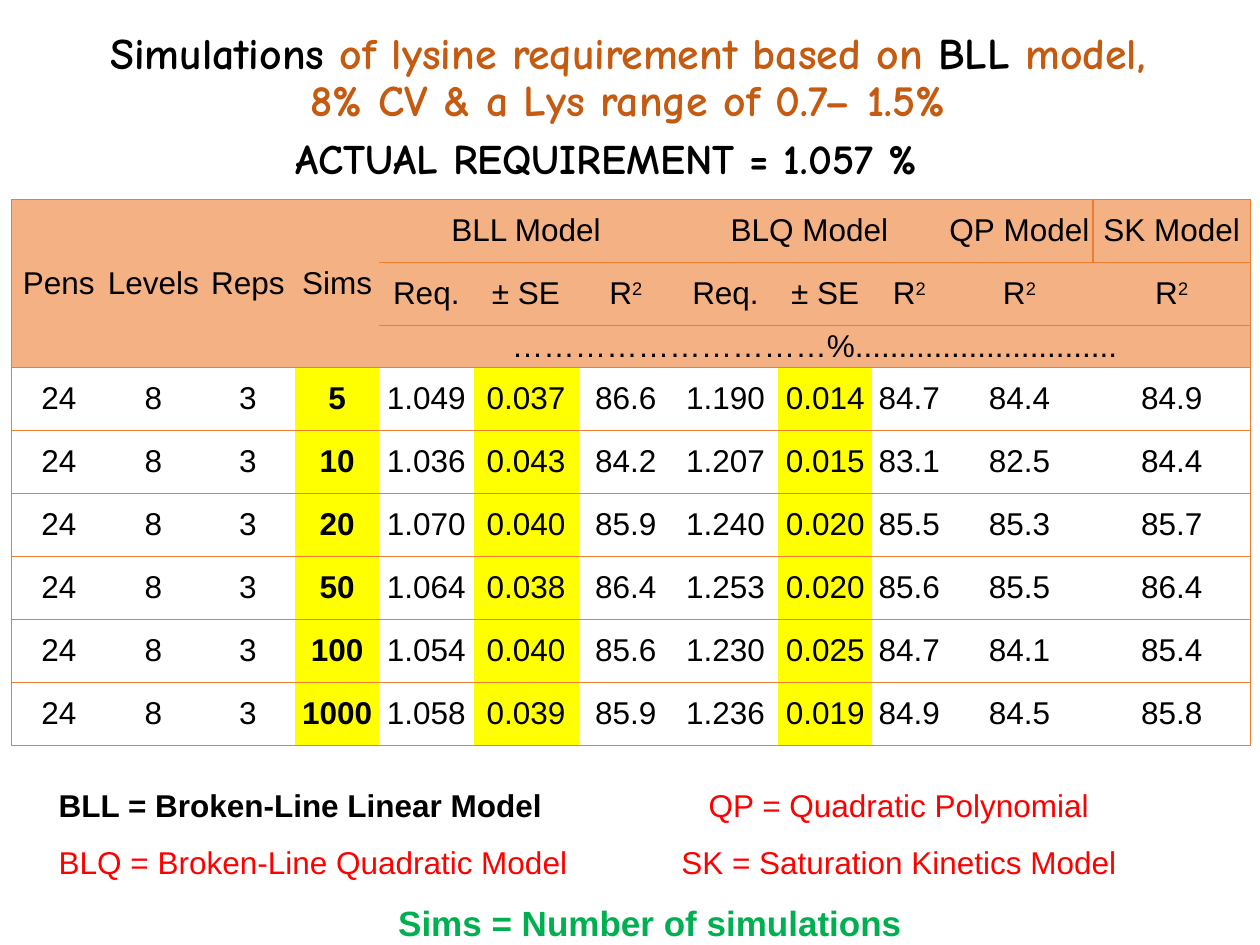
import dataclasses
import typing

import pptx
import pptx.dml.color
import pptx.enum.text
import pptx.oxml
import pptx.oxml.ns
import pptx.util

SCALE = 7620
BLACK, RUST, RED, GREEN = "000000", "C55A11", "FF0000", "00B050"
PEACH, WHITE, YELLOW, LINE = "F4B183", "FFFFFF", "FFFF00", "ED7D31"
ALIGN = pptx.enum.text.PP_ALIGN
MIDDLE = pptx.enum.text.MSO_ANCHOR.MIDDLE

COLS = (90, 90, 90, 80, 90, 100, 90, 100, 90, 70, 140, 150)
ROWS = (60, 60, 40) + (60,) * 6
LAST = len(COLS) - 1
SIMS = 3
MARKED = (3, 5, 8)
DOTS = "…………………………%.............................."
HEADS = (
    ("Pens", "Levels", "Reps", "Sims", "BLL Model", "", "",
     "BLQ Model", "", "", "QP\u00a0Model", "SK\u00a0Model"),
    ("",) * 4 + ("Req.", "± SE", "R2") * 2 + ("R2", "R2"),
    ("",) * 4 + (DOTS,) + ("",) * 7,
)
DATA = (
    "5 1.049 0.037 86.6 1.190 0.014 84.7 84.4 84.9",
    "10 1.036 0.043 84.2 1.207 0.015 83.1 82.5 84.4",
    "20 1.070 0.040 85.9 1.240 0.020 85.5 85.3 85.7",
    "50 1.064 0.038 86.4 1.253 0.020 85.6 85.5 86.4",
    "100 1.054 0.040 85.6 1.230 0.025 84.7 84.1 85.4",
    "1000 1.058 0.039 85.9 1.236 0.019 84.9 84.5 85.8",
)
SPANS = [(0, c, 2, c) for c in range(4)] + [(0, 4, 0, 6), (0, 7, 0, 9), (2, 4, 2, LAST)]


@dataclasses.dataclass
class Run:
    text: str
    color: str = BLACK
    bold: bool = False
    size: int = 18
    font: str = "Arial"
    raised: bool = False


@dataclasses.dataclass
class Line:
    runs: typing.List[Run]
    align: typing.Any = ALIGN.LEFT
    space: float = 1.0
    tab: int = 0


@dataclasses.dataclass
class Box:
    left: int
    top: int
    width: int
    height: int
    lines: typing.List[Line]
    format: dict = dataclasses.field(default_factory=dict)


def px(n: int) -> int:
    return pptx.util.Emu(n * SCALE)


def rgb(code: str) -> pptx.dml.color.RGBColor:
    return pptx.dml.color.RGBColor.from_string(code)


def apply(item: typing.Any, values: dict) -> None:
    for name, value in values.items():
        setattr(item, name, value)


def add_line(para: typing.Any, line: Line) -> None:
    apply(para, {"alignment": line.align, "line_spacing": line.space})
    if line.tab:
        tabs = pptx.oxml.parse_xml(
            f'<a:tabLst {pptx.oxml.ns.nsdecls("a")}>'
            f'<a:tab pos="{px(line.tab)}" algn="l"/></a:tabLst>')
        para._p.get_or_add_pPr().append(tabs)
    for run in line.runs:
        if run.text == "\n":
            para.add_line_break()
            continue
        part = para.add_run()
        part.text = run.text
        apply(part.font, {"name": run.font, "size": pptx.util.Pt(run.size), "bold": run.bold})
        part.font.color.rgb = rgb(run.color)
        if run.raised:
            part._r.get_or_add_rPr().set("baseline", "30000")


def add_box(slide: typing.Any, box: Box) -> None:
    shape = slide.shapes.add_textbox(*map(px, (box.left, box.top, box.width, box.height)))
    frame = shape.text_frame
    apply(frame, {"word_wrap": True, **box.format})
    for n, line in enumerate(box.lines):
        add_line(frame.add_paragraph() if n else frame.paragraphs[0], line)


def add_edges(cell: typing.Any, sides: str) -> None:
    props = cell._tc.get_or_add_tcPr()
    for n, side in enumerate("LRTB"):
        paint = f'<a:solidFill><a:srgbClr val="{LINE}"/></a:solidFill>'
        if side not in sides:
            paint = "<a:noFill/>"
        props.insert(n, pptx.oxml.parse_xml(
            f'<a:ln{side} {pptx.oxml.ns.nsdecls("a")} w="12700">{paint}</a:ln{side}>'))


def add_grid(slide: typing.Any) -> None:
    rows = HEADS + tuple(["24", "8", "3"] + row.split() for row in DATA)
    table = slide.shapes.add_table(
        len(ROWS), len(COLS), px(11), px(190), px(sum(COLS)), px(sum(ROWS))).table
    apply(table, {"first_row": False, "horz_banding": False})
    for col, width in zip(table.columns, COLS):
        col.width = px(width)
    for row, height in zip(table.rows, ROWS):
        row.height = px(height)
    for top, left, low, right in SPANS:
        table.cell(top, left).merge(table.cell(low, right))
    for r, row in enumerate(rows):
        for c, text in enumerate(row):
            cell = table.cell(r, c)
            head = r < len(HEADS)
            apply(cell, {"margin_left": 0, "margin_right": 0, "margin_top": 0,
                         "margin_bottom": 0, "vertical_anchor": MIDDLE})
            cell.fill.solid()
            cell.fill.fore_color.rgb = rgb(
                PEACH if head else YELLOW if c in MARKED else WHITE)
            sides = "" if head and c < 4 and r else "TB"
            sides += "L" if c == 0 or (r, c) == (0, LAST) else ""
            sides += "R" if c == LAST or (r, c) == (0, LAST - 1) or text == DOTS else ""
            add_edges(cell, sides)
            runs = [Run(text, bold=not head and c == SIMS)] if text else []
            if text == "R2":
                runs = [Run("R"), Run("2", raised=True)]
            add_line(cell.text_frame.paragraphs[0], Line(runs, ALIGN.CENTER))


def title(text: str, color: str = RUST, size: int = 25) -> Run:
    return Run(text, color, True, size, "Comic Neue")


BOXES = (
    Box(5, 0, 1186, 150, [Line([
        title("Simulations", BLACK), title(" of lysine requirement based on "),
        title("BLL", BLACK), title(" model,"), title("\n"),
        title("8% CV & a Lys range of 0.7– 1.5%")], ALIGN.CENTER, 0.9)],
        {"vertical_anchor": MIDDLE}),
    Box(-16, 725, 1210, 181, [
        Line([Run("BLL = Broken-Line Linear Model\t", bold=True),
              Run("QP = Quadratic Polynomial", RED)], space=1.5, tab=619),
        Line([Run("BLQ = Broken-Line Quadratic Model\tSK = Saturation Kinetics Model", RED)],
             space=1.5, tab=593),
        Line([Run("Sims = Number of simulations", GREEN, True, 20)], ALIGN.CENTER, 1.5)],
        {"margin_left": px(72)}),
    Box(270, 120, 760, 60, [Line([title("ACTUAL REQUIREMENT = 1.057 %", BLACK, 24)])]),
)


def main() -> None:
    deck = pptx.Presentation()
    apply(deck, {"slide_width": px(1200), "slide_height": px(900)})
    slide = deck.slides.add_slide(deck.slide_layouts[6])
    add_grid(slide)
    for box in BOXES:
        add_box(slide, box)
    deck.save("out.pptx")


if __name__ == "__main__":
    main()
